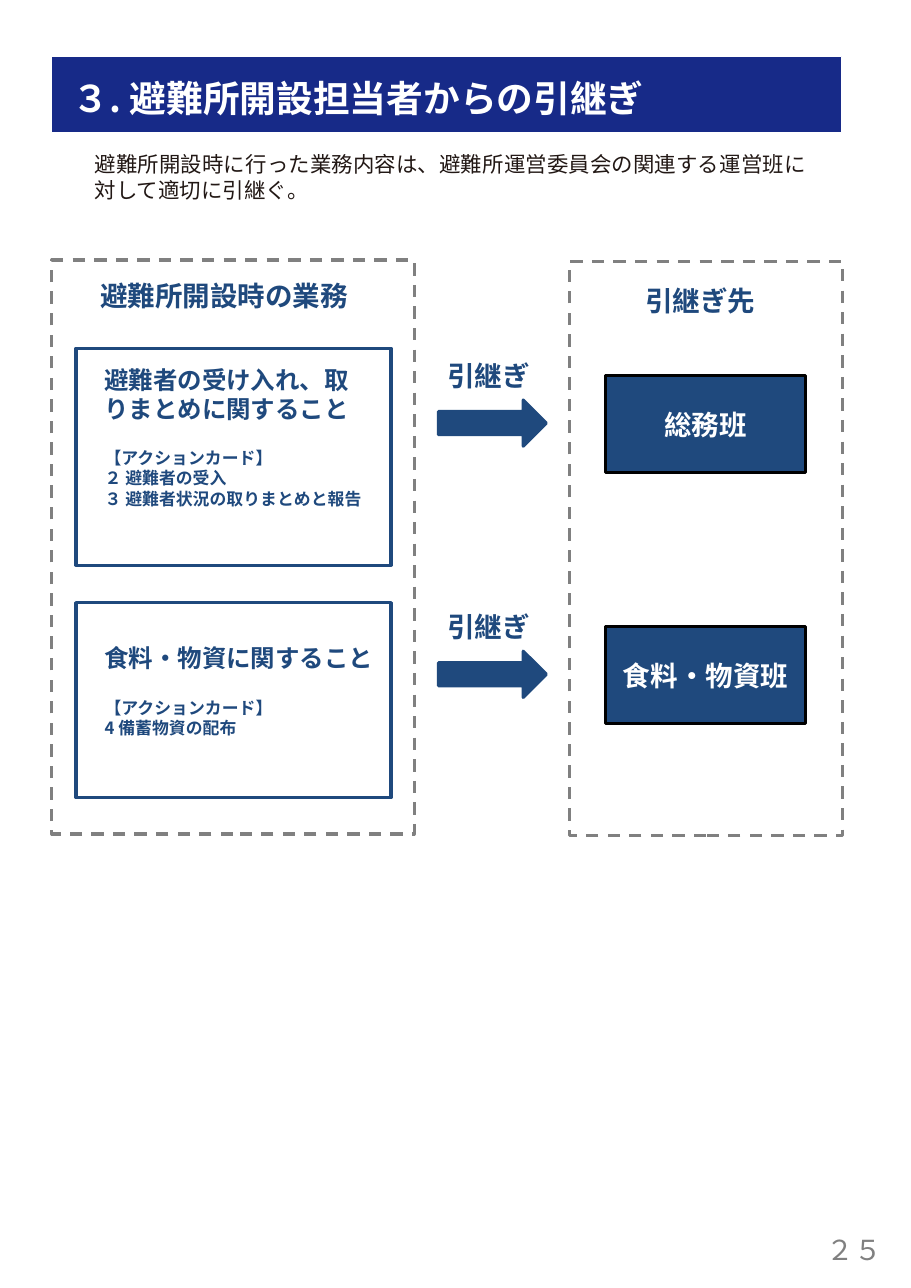
from dataclasses import dataclass

from pptx import Presentation
from pptx.dml.color import RGBColor
from pptx.enum.dml import MSO_LINE
from pptx.enum.shapes import MSO_SHAPE
from pptx.enum.text import MSO_ANCHOR, PP_ALIGN
from pptx.oxml.ns import qn
from pptx.util import Emu, Pt

PX = 9144  # 100 px to the inch


@dataclass(frozen=True)
class Theme:
    banner: str = "172A88"
    navy: str = "1F497D"
    body: str = "221815"
    gray: str = "808080"
    white: str = "FFFFFF"
    black: str = "000000"
    font: str = "Noto Sans CJK JP"
    number_font: str = "Arial"
    title_size: int = 24
    label_size: int = 18
    card_size: int = 16
    body_size: int = 14
    small_size: int = 11
    outline: float = 2
    hairline: float = 0.75
    card_gap: int = 16


class SlideBuilder:
    def __init__(self, page, theme):
        self.page = page
        self.theme = theme

    def shape(self, area, fill=None, line=None, width=None, kind=MSO_SHAPE.RECTANGLE, dashed=False):
        shape = self.page.shapes.add_shape(kind, *(Emu(n * PX) for n in area))
        shape.shadow.inherit = False
        if fill:
            shape.fill.solid()
            shape.fill.fore_color.rgb = RGBColor.from_string(fill)
        else:
            shape.fill.background()
        shape.line.color.rgb = RGBColor.from_string(line)
        shape.line.width = Pt(width or self.theme.outline)
        if dashed:
            shape.line.dash_style = MSO_LINE.DASH
        return shape

    def style(self, para, size, color, bold=True, align=PP_ALIGN.LEFT, font=None):
        para.alignment = align
        face = para.font
        face.name = font or self.theme.font
        face.size = Pt(size)
        face.bold = bold
        face.color.rgb = RGBColor.from_string(color)
        properties = para._p.get_or_add_pPr().find(qn("a:defRPr"))
        east_asian = properties.makeelement(qn("a:ea"), {"typeface": face.name})
        properties.find(qn("a:latin")).addnext(east_asian)

    def text(self, area, words, size, color, insets=(10, 5, 10, 5), **style):
        box = self.page.shapes.add_textbox(*(Emu(n * PX) for n in area))
        frame = box.text_frame
        frame.word_wrap = True
        (frame.margin_left, frame.margin_top,
         frame.margin_right, frame.margin_bottom) = (Emu(n * PX) for n in insets)
        para = frame.paragraphs[0]
        para.text = words
        self.style(para, size, color, **style)
        return frame

    def label(self, area, words):
        self.text(area, words, self.theme.label_size, self.theme.navy)

    def panel(self, area, heading, heading_area):
        self.shape(area, line=self.theme.gray, dashed=True)
        self.label(heading_area, heading)

    def card(self, area, text_area, heading, actions):
        """Outlined task with its heading and list of action cards."""
        theme = self.theme
        self.shape(area, line=theme.navy)
        frame = self.text(text_area, heading, theme.card_size, theme.navy, insets=(8, 1, 0, 0))
        for index, action in enumerate(["【アクションカード】", *actions]):
            para = frame.add_paragraph()
            para.text = action
            self.style(para, theme.small_size, theme.navy)
            if index == 0:
                para.space_before = Pt(theme.card_gap)

    def handover(self, top, team):
        """Label, arrow and receiving team of one row."""
        theme = self.theme
        self.label((396, top, 101, 40), "引継ぎ")
        self.shape((398, top + 42, 98, 42), theme.navy, theme.navy, kind=MSO_SHAPE.RIGHT_ARROW)
        box = self.shape((550, top + 20, 181, 88), theme.navy, theme.black)
        box.text_frame.vertical_anchor = MSO_ANCHOR.MIDDLE
        para = box.text_frame.paragraphs[0]
        para.text = team
        self.style(para, theme.label_size, theme.white, align=PP_ALIGN.CENTER)


def main():
    deck = Presentation()
    deck.slide_width, deck.slide_height = Emu(827 * PX), Emu(1169 * PX)
    theme = Theme()
    slide = SlideBuilder(deck.slides.add_slide(deck.slide_layouts[6]), theme)

    slide.shape((47, 51, 717, 69), theme.banner, theme.white, theme.hairline)
    slide.text((65, 68, 677, 42), "３. 避難所開設担当者からの引継ぎ",
               theme.title_size, theme.white, insets=(1, 1, 0, 0))
    slide.text((78, 136, 654, 56),
               "避難所開設時に行った業務内容は、避難所運営委員会の関連する運営班に対して適切に引継ぐ。",
               theme.body_size, theme.body, insets=(8, 1, 0, 0),
               bold=False, align=PP_ALIGN.JUSTIFY)

    slide.panel((47, 236, 329, 521), "避難所開設時の業務", (81, 248, 287, 40))
    slide.panel((517, 237, 248, 521), "引継ぎ先", (576, 253, 158, 40))

    slide.card((69, 316, 286, 197), (87, 330, 244, 154),
               "避難者の受け入れ、取りまとめに関すること",
               ["２ 避難者の受入", "３ 避難者状況の取りまとめと報告"])
    slide.card((69, 547, 286, 177), (87, 583, 260, 99),
               "食料・物資に関すること", ["4 備蓄物資の配布"])

    for row, team in enumerate(["総務班", "食料・物資班"]):
        slide.handover(321 + row * 228, team)

    slide.text((738, 1114, 75, 40), "２５", theme.label_size, theme.gray,
               bold=False, align=PP_ALIGN.CENTER, font=theme.number_font)
    deck.save("out.pptx")


if __name__ == "__main__":
    main()
